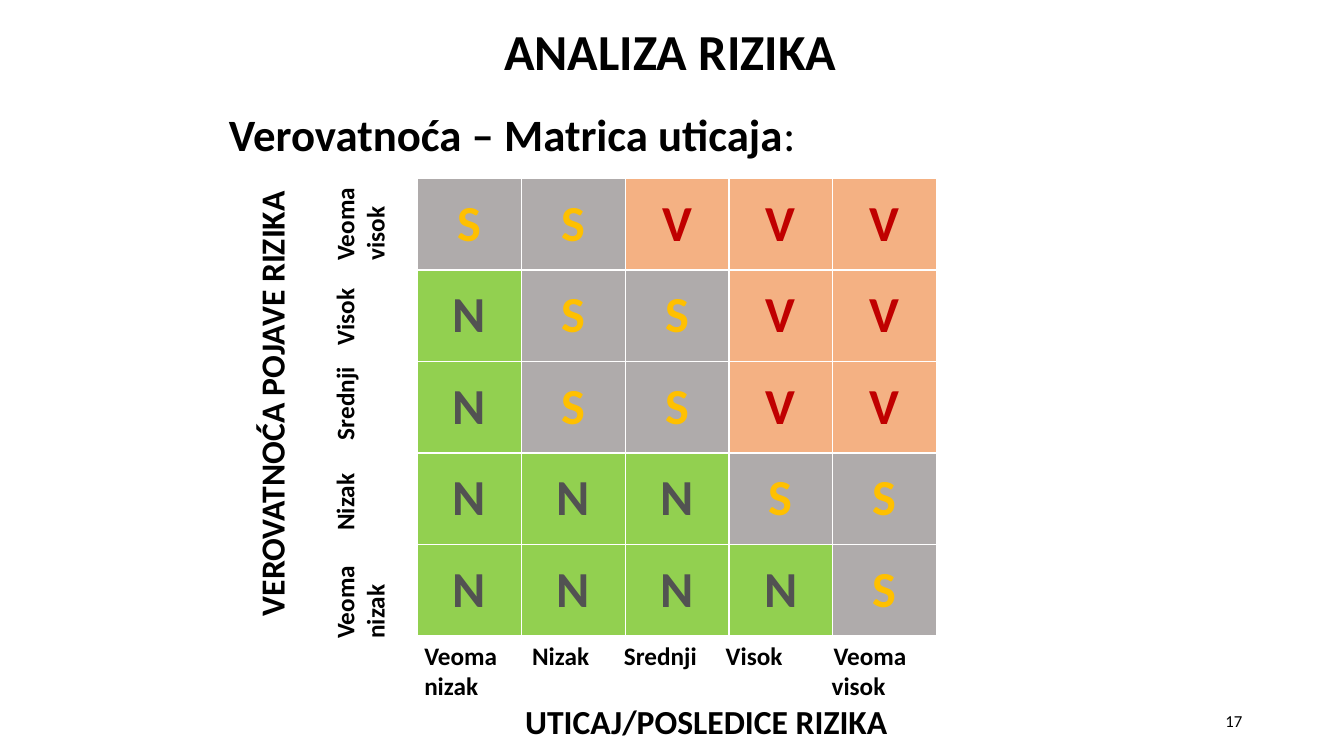
"""Build the risk analysis slide with its probability and impact matrix."""
from lxml import etree
from pptx import Presentation
from pptx.dml.color import RGBColor
from pptx.enum.text import MSO_ANCHOR, PP_ALIGN
from pptx.oxml.ns import qn
from pptx.util import Inches, Pt

LEFT, CENTER, RIGHT = PP_ALIGN.LEFT, PP_ALIGN.CENTER, PP_ALIGN.RIGHT
TOP, MIDDLE = MSO_ANCHOR.TOP, MSO_ANCHOR.MIDDLE
FONT = "Calibri"
COLORS = {"text": "000000", "low": "92D050", "medium": "AFABAB", "high": "F4B183",
          "low_text": "525252", "medium_text": "FFC000", "high_text": "C00000"}
LEVELS = {"N": "low", "S": "medium", "V": "high"}
MATRIX = ["SSVVV", "NSSVV", "NSSVV", "NNNSS", "NNNNS"]
GRID_X, GRID_Y, COL_W, ROW_H = 4.14, 1.77, 1.03, 0.908


def style(p, size, color="text", bold=True, align=LEFT):
    p.alignment = align
    p.font.name, p.font.size, p.font.bold = FONT, Pt(size), bold
    p.font.color.rgb = RGBColor.from_string(COLORS[color])


def add_text(box, lines, size, bold=True, align=LEFT, anchor=TOP, tabs=()):
    tf = s.shapes.add_textbox(*map(Inches, box)).text_frame
    tf.word_wrap, tf.vertical_anchor = True, anchor
    for i, line in enumerate(lines):
        p = tf.paragraphs[0] if i == 0 else tf.add_paragraph()
        p.text = line
        style(p, size, bold=bold, align=align)
        if tabs:
            stops = etree.SubElement(p._p.get_or_add_pPr(), qn("a:tabLst"))
            for stop in tabs[i]:
                etree.SubElement(stops, qn("a:tab"), pos=str(Inches(stop)), algn="l")
    return tf


prs = Presentation()
prs.slide_width, prs.slide_height = Inches(13.33), Inches(7.5)
s = prs.slides.add_slide(prs.slide_layouts[6])

tf = add_text((2.15, 0, 9, 1.07), ["ANALIZA RIZIKA"], 36, align=CENTER, anchor=MIDDLE)
tf.paragraphs[0].line_spacing = 0.9

tf = add_text((1.67, 1.07, 10, 0.7), ["Verovatnoća – Matrica uticaja"], 32)
tf.margin_left = Inches(0.6)
p = tf.paragraphs[0]
p.line_spacing, p.space_before = 0.9, Pt(5)
r = p.add_run()
r.text, r.font.bold = ":", False

add_text((9.42, 6.95, 3, 0.4), ["17"], 12, bold=False, align=RIGHT, anchor=MIDDLE)

tf = add_text((4.11, 6.3, 7.36, 1.41),
              ["Veoma\tNizak\tSrednji\tVisok\tVeoma", "nizak\tvisok",
               "\tUTICAJ/POSLEDICE RIZIKA"], 18,
              tabs=[(1.07, 1.98, 2.99, 4.06), (4.04,), (1,)])
tf.paragraphs[2].font.size = Pt(24)

tf = add_text((1.17, 3.76, 4.8, 0.71),
              ["Veoma\tNizak\tSrednji\tVisok\tVeoma", "nizak\tvisok"], 18,
              tabs=[(1.07, 1.97, 2.91, 3.75), (3.75,)])
tf.margin_left = Inches(0.18)
s.shapes[-1].rotation = 270

tf = add_text((0.46, 3.73, 4.46, 0.5), ["VEROVATNOĆA POJAVE RIZIKA"], 24)
tf.word_wrap = False
s.shapes[-1].rotation = 270

n = len(MATRIX)
table = s.shapes.add_table(n, n, Inches(GRID_X), Inches(GRID_Y),
                           Inches(n * COL_W), Inches(n * ROW_H)).table
for i, row in enumerate(MATRIX):
    for j, letter in enumerate(row):
        cell = table.cell(i, j)
        level = LEVELS[letter]
        cell.fill.solid()
        cell.fill.fore_color.rgb = RGBColor.from_string(COLORS[level])
        cell.vertical_anchor = MIDDLE
        p = cell.text_frame.paragraphs[0]
        p.text = letter
        style(p, 36, level + "_text", align=CENTER)

prs.save("out.pptx")
